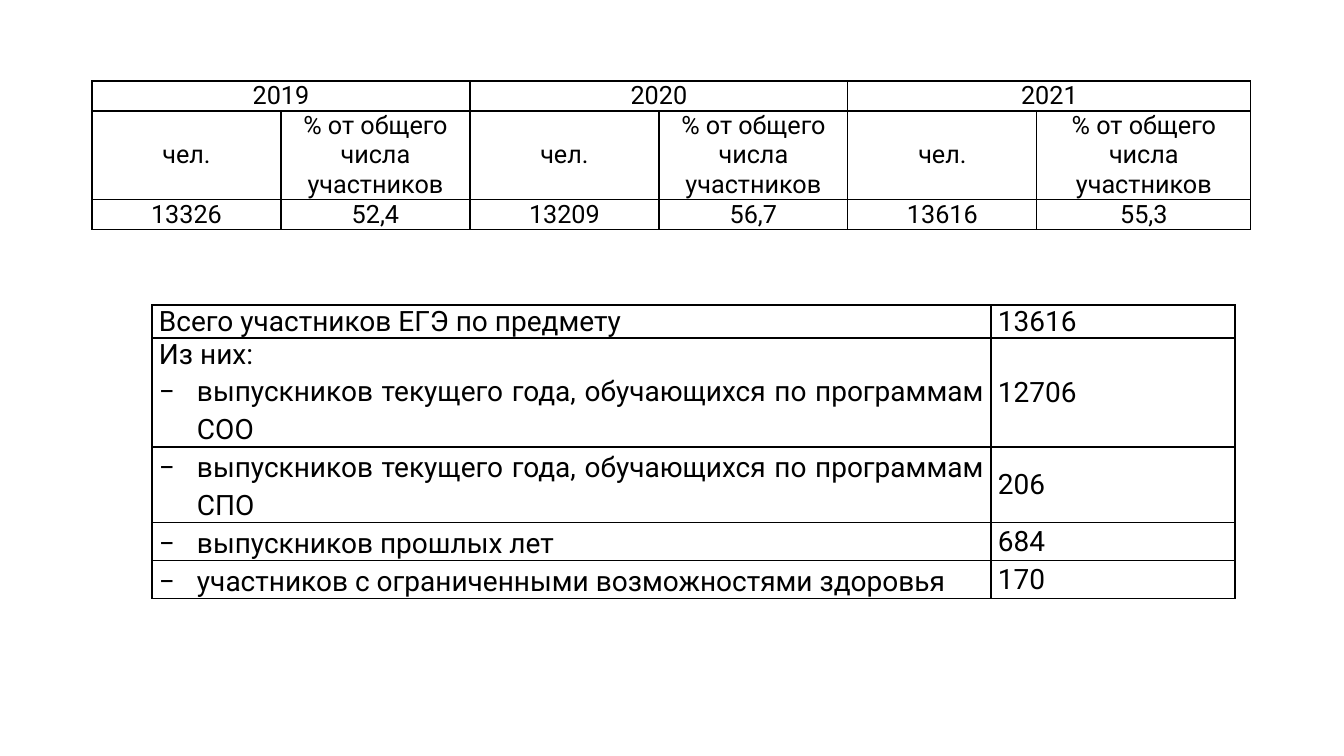
from lxml.etree import SubElement
from pptx import Presentation
from pptx.dml.color import RGBColor
from pptx.enum.text import MSO_ANCHOR, PP_ALIGN
from pptx.oxml.ns import qn
from pptx.util import Emu, Pt

FONT = "Roboto"
COLORS = {"ink": "000000"}
BULLET = "−"
YEARS = [
    ("2019", "13326", "52,4"),
    ("2020", "13209", "56,7"),
    ("2021", "13616", "55,3"),
]
MEASURES = ("чел.", "% от общего числа участников")
PARTICIPANTS = [
    (["Всего участников ЕГЭ по предмету"], "13616"),
    (["Из них:", "− выпускников текущего года, обучающихся по программам СОО"], "12706"),
    (["− выпускников текущего года, обучающихся по программам СПО"], "206"),
    (["− выпускников прошлых лет"], "684"),
    (["− участников с ограниченными возможностями здоровья"], "170"),
]


def px(length):
    return Emu(round(length * 914400 / 100.8))


def place_table(slide, left, top, widths, heights):
    table = slide.shapes.add_table(
        len(heights), len(widths), px(left), px(top), px(sum(widths)), px(sum(heights))
    ).table
    table.first_row = False
    table.horz_banding = False
    for column, width in zip(table.columns, widths):
        column.width = px(width)
    for row, height in zip(table.rows, heights):
        row.height = px(height)
    for cell in table.iter_cells():
        cell.margin_left = cell.margin_right = px(7)
        cell.margin_top = cell.margin_bottom = 0
        draw_borders(cell)
        cell.fill.background()
    return table


def draw_borders(cell):
    properties = cell._tc.get_or_add_tcPr()
    for side in ("a:lnL", "a:lnR", "a:lnT", "a:lnB"):
        border = SubElement(properties, qn(side), w=str(Pt(1)))
        fill = SubElement(border, qn("a:solidFill"))
        SubElement(fill, qn("a:srgbClr"), val=COLORS["ink"])


def write(cell, lines, size, align, anchor):
    cell.vertical_anchor = anchor
    frame = cell.text_frame
    for index, line in enumerate(lines):
        paragraph = frame.add_paragraph() if index else frame.paragraphs[0]
        paragraph.alignment = align
        if line.startswith(BULLET):
            add_bullet(paragraph)
        run = paragraph.add_run()
        run.text = line.removeprefix(BULLET).lstrip()
        run.font.size = Pt(size)
        run.font.name = FONT
        run.font.color.rgb = RGBColor.from_string(COLORS["ink"])


def add_bullet(paragraph):
    paragraph.line_spacing = 1.15
    properties = paragraph._p.get_or_add_pPr()
    properties.set("marL", str(px(38)))
    properties.set("indent", str(-px(38)))
    SubElement(properties, qn("a:buFont"), typeface=FONT)
    SubElement(properties, qn("a:buChar"), char=BULLET)


def add_years(slide):
    table = place_table(slide, 92, 81, [189] * 5 + [214], [30, 88, 30])
    for index, (year, *values) in enumerate(YEARS):
        first = 2 * index
        heading = table.cell(0, first)
        heading.merge(table.cell(0, first + 1))
        write(heading, [year], 18, PP_ALIGN.CENTER, MSO_ANCHOR.TOP)
        for column, (measure, value) in enumerate(zip(MEASURES, values), first):
            write(table.cell(1, column), [measure], 18, PP_ALIGN.CENTER, MSO_ANCHOR.MIDDLE)
            write(table.cell(2, column), [value], 18, PP_ALIGN.CENTER, MSO_ANCHOR.TOP)


def add_participants(slide):
    table = place_table(slide, 152, 305, [839, 244], [33, 109, 75, 38, 38])
    for row, (groups, count) in enumerate(PARTICIPANTS):
        write(table.cell(row, 0), groups, 20, PP_ALIGN.JUSTIFY, MSO_ANCHOR.TOP)
        write(table.cell(row, 1), [count], 20, PP_ALIGN.JUSTIFY, MSO_ANCHOR.MIDDLE)


def main():
    deck = Presentation()
    deck.slide_width, deck.slide_height = px(1344), px(756)
    slide = deck.slides.add_slide(deck.slide_layouts[6])
    add_years(slide)
    add_participants(slide)
    deck.save("out.pptx")


if __name__ == "__main__":
    main()
